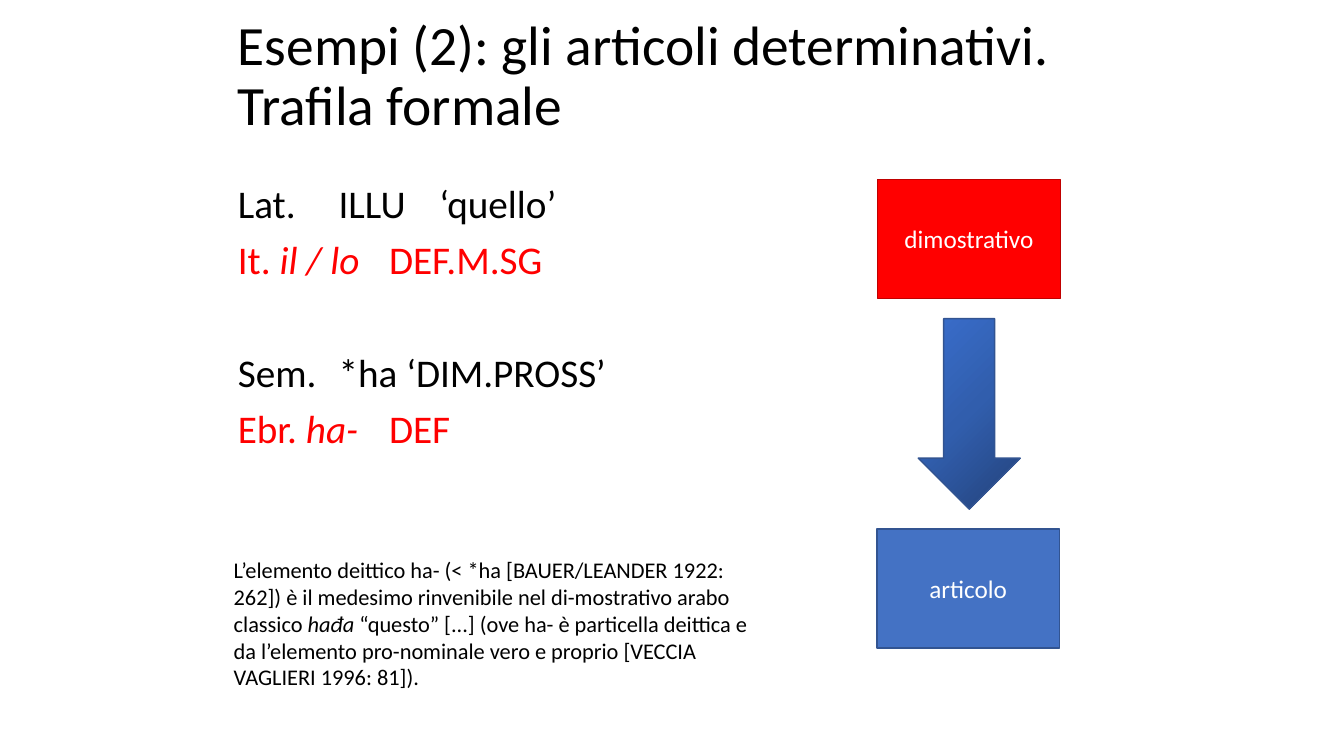
from pptx import Presentation
from pptx.dml.color import RGBColor
from pptx.enum.shapes import MSO_SHAPE
from pptx.enum.text import MSO_ANCHOR, MSO_AUTO_SIZE, PP_ALIGN
from pptx.oxml import parse_xml
from pptx.oxml.ns import nsdecls
from pptx.util import Cm, Pt

RECT, ARROW = MSO_SHAPE.RECTANGLE, MSO_SHAPE.DOWN_ARROW
TOP, MIDDLE = MSO_ANCHOR.TOP, MSO_ANCHOR.MIDDLE
LEFT, CENTER = PP_ALIGN.LEFT, PP_ALIGN.CENTER
NO_FIT = MSO_AUTO_SIZE.NONE
FONT = "Calibri"
BLACK, WHITE, RED, BLUE, NAVY = "000000", "FFFFFF", "FF0000", "4472C4", "325491"

TITLE = "Esempi (2): gli articoli determinativi. Trafila formale"
# Runs as (text, italic), colour, space before in points, tab stops in cm
LINES = [
    ([("Lat.\tILLU\t‘quello’", False)], BLACK, 0, [2.53, 5.35]),
    ([("It. ", False), ("il / lo", True), ("\tDEF.M.SG", False)], RED, 10, [4.85]),
    ([("Sem.\t*ha ‘DIM.PROSS’", False)], BLACK, 50, [5.57]),
    ([("Ebr. ", False), ("ha-", True), ("\tDEF", False)], RED, 10, [5.75]),
]
NOTE = [
    ("L’elemento deittico ha- (< *ha [BAUER/LEANDER 1922: 262]) è il medesimo "
     "rinvenibile nel di-mostrativo arabo classico ", False),
    ("hađa", True),
    (" “questo” [...] (ove ha- è particella deittica e da l’elemento pro-nominale "
     "vero e proprio [VECCIA VAGLIERI 1996: 81]).", False),
]
# Label, left and top in cm, fill, line
BOXES = [
    ("dimostrativo", 22.12, 4.52, RED, "C00000"),
    ("articolo", 22.1, 13.33, BLUE, NAVY),
]
SHADES = [(0, "23427A"), (50, "315EAD"), (100, "3A6FCE")]


def color(code):
    return RGBColor.from_string(code)


def place(shape, left, top, width, height):
    shape.left, shape.top = Cm(left), Cm(top)
    shape.width, shape.height = Cm(width), Cm(height)


def style(para, size, code, align=LEFT):
    para.alignment = align
    para.font.name, para.font.size = FONT, Pt(size)
    para.font.color.rgb = color(code)


def write(para, runs):
    for text, slant in runs:
        run = para.add_run()
        run.text = text
        if slant:
            run.font.italic = True


def set_tabs(para, stops):
    """Remove the bullet and indent, then set left tab stops."""
    props = para._p.get_or_add_pPr()
    props.set("marL", "0")
    props.set("indent", "0")
    tabs = "".join(f'<a:tab pos="{Cm(stop)}" algn="l"/>' for stop in stops)
    props.append(parse_xml(f'<a:buNone {nsdecls("a")}/>'))
    props.append(parse_xml(f'<a:tabLst {nsdecls("a")}>{tabs}</a:tabLst>'))


def shade(shape):
    """Fill with a gradient that spreads from the lower right corner."""
    stops = "".join(
        f'<a:gs pos="{pos * 1000}"><a:srgbClr val="{code}"/></a:gs>'
        for pos, code in SHADES)
    fill = parse_xml(
        f'<a:gradFill {nsdecls("a")}><a:gsLst>{stops}</a:gsLst>'
        '<a:path path="circle"><a:fillToRect l="100000" t="100000"/></a:path>'
        '</a:gradFill>')
    shape._element.spPr.insert(2, fill)


def add_box(slide, kind, spot, line):
    shape = slide.shapes.add_shape(kind, *map(Cm, spot))
    shape.shadow.inherit = False
    shape.line.color.rgb = color(line)
    shape.line.width = Pt(1)
    return shape


def main():
    deck = Presentation()
    deck.slide_width, deck.slide_height = Cm(33.87), Cm(19.05)
    slide = deck.slides.add_slide(deck.slide_layouts[1])

    title, body = slide.placeholders
    place(title, 5.74, 0.36, 22.86, 3.18)
    place(body, 5.74, 4.52, 16, 8.31)
    for holder, anchor in ((title, MIDDLE), (body, TOP)):
        holder.text_frame.auto_size = NO_FIT
        holder.text_frame.vertical_anchor = anchor

    title.text_frame.text = TITLE
    head = title.text_frame.paragraphs[0]
    head.line_spacing = 0.9
    style(head, 39.6, BLACK)

    frame = body.text_frame
    for i, (runs, code, gap, stops) in enumerate(LINES):
        para = frame.add_paragraph() if i else frame.paragraphs[0]
        set_tabs(para, stops)
        para.line_spacing, para.space_before = 0.9, Pt(gap)
        style(para, 28, code)
        write(para, runs)

    for label, left, top, fill, line in BOXES:
        box = add_box(slide, RECT, (left, top, 4.6, 3), line)
        box.fill.solid()
        box.fill.fore_color.rgb = color(fill)
        box.text_frame.text = label
        box.text_frame.vertical_anchor = MIDDLE
        style(box.text_frame.paragraphs[0], 18, WHITE, CENTER)

    shade(add_box(slide, ARROW, (23.14, 8.03, 2.57, 4.8), NAVY))

    note = slide.shapes.add_textbox(Cm(5.64), Cm(13.89), Cm(13.49), Cm(3.68))
    note.text_frame.word_wrap = True
    para = note.text_frame.paragraphs[0]
    style(para, 16, BLACK)
    write(para, NOTE)

    deck.save("out.pptx")


if __name__ == "__main__":
    main()
